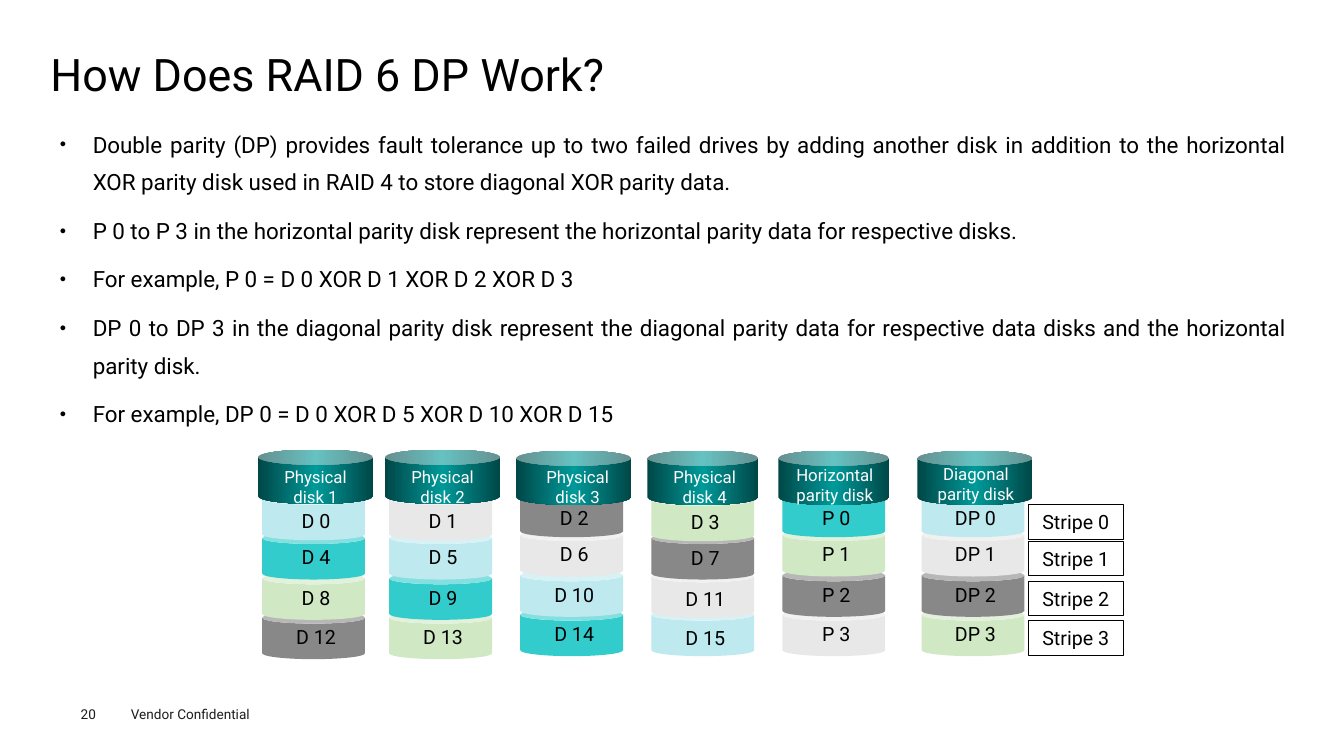
from dataclasses import dataclass
from copy import deepcopy

from lxml import etree
from pptx import Presentation
from pptx import util as u
from pptx.dml.color import RGBColor
from pptx.enum import shapes, text
from pptx.oxml.ns import qn

PX = u.Inches(1) // 100


@dataclass(frozen=True)
class Theme:
    font: str = "Roboto"
    black: str = "000000"
    white: str = "FFFFFF"
    footer: str = "1D1D1B"
    cap_edge: str = "004747"
    cap_middle: str = "009999"
    title_size: float = 32
    body_size: float = 16
    block_size: float = 14
    cap_size: float = 12
    footer_size: float = 9.7


@dataclass(frozen=True)
class Disk:
    name: str
    left: int
    top: int
    stack_span: int
    cap_top: int
    cap_width: int
    name_box: tuple
    blocks: str
    colors: str


THEME = Theme()
BLOCK_COLORS = {"blue": "BEE9EE", "teal": "33CCCC", "green": "D0E8C4",
                "dark": "888888", "light": "E8E8E8"}
LABEL_OFFSETS = (11, 47, 87, 126)

DISKS = (
    Disk("Physical disk 1", 260, 489, 118, 446, 114, (268, 458, 90, 50),
         "D 0,D 4,D 8,D 12", "blue teal green dark"),
    Disk("Physical disk 2", 386, 489, 118, 446, 114, (394, 458, 90, 50),
         "D 1,D 5,D 9,D 13", "light blue teal green"),
    Disk("Physical disk 3", 516, 486, 118, 447, 114, (528, 458, 90, 50),
         "D 2,D 6,D 10,D 14", "dark light blue teal"),
    Disk("Physical disk 4", 646, 490, 114, 447, 110, (654, 458, 90, 50),
         "D 3,D 7,D 11,D 15", "green dark light blue"),
    Disk("Horizontal parity disk", 776, 486, 118, 447, 110, (767, 456, 122, 50),
         "P 0,P 1,P 2,P 3", "teal green dark light"),
    Disk("Diagonal parity disk", 914, 486, 118, 447, 114, (905, 455, 126, 50),
         "DP 0,DP 1,DP 2,DP 3", "blue light dark green"),
)

POINTS = (
    "Double parity (DP) provides fault tolerance up to two failed drives by adding another "
    "disk in addition to the horizontal XOR parity disk used in RAID 4 to store diagonal "
    "XOR parity data.",
    "P 0 to P 3 in the horizontal parity disk represent the horizontal parity data for "
    "respective disks.",
    "For example, P 0 = D 0 XOR D 1 XOR D 2 XOR D 3",
    "DP 0 to DP 3 in the diagonal parity disk represent the diagonal parity data for "
    "respective data disks and the horizontal parity disk.",
    "For example, DP 0 = D 0 XOR D 5 XOR D 10 XOR D 15",
)


def emu(box):
    return [length * PX for length in box]


def apply(target, values):
    for name, value in values.items():
        setattr(target, name, value)


def move(shape, box):
    apply(shape, dict(zip(("left", "top", "width", "height"), emu(box))))


def write(paragraph, words, size, color, **layout):
    apply(paragraph, layout)
    run = paragraph.add_run()
    run.text = words
    apply(run.font, {"name": THEME.font, "size": u.Pt(size)})
    run.font.color.rgb = RGBColor.from_string(color)


def set_margins(frame, horizontal, vertical):
    apply(frame, {"margin_left": horizontal * PX, "margin_right": horizontal * PX,
                  "margin_top": vertical * PX, "margin_bottom": vertical * PX})


def add_label(slide, box, words, size, color, align=text.PP_ALIGN.CENTER, margins=(10, 5)):
    frame = slide.shapes.add_textbox(*emu(box)).text_frame
    frame.word_wrap = True
    set_margins(frame, *margins)
    write(frame.paragraphs[0], words, size, color, alignment=align)


def add_can(slide, box, adjustment):
    can = slide.shapes.add_shape(shapes.MSO_SHAPE.CAN, *emu(box))
    can.adjustments[0] = adjustment
    can.shadow.inherit = False
    can.line.fill.background()
    return can


def fill_cap(cap):
    cap.fill.gradient()
    cap.fill.gradient_angle = 0
    stop_list = next(cap._element.spPr.iter(qn("a:gsLst")))
    stop_list.append(deepcopy(stop_list[0]))
    colors = (THEME.cap_edge, THEME.cap_middle, THEME.cap_edge)
    for stop, position, color in zip(cap.fill.gradient_stops, (0, 0.5, 1), colors):
        stop.position = position
        stop.color.rgb = RGBColor.from_string(color)


def add_title(slide, box):
    title = slide.shapes.title
    move(title, box)
    frame = title.text_frame
    set_margins(frame, 0, 0)
    apply(frame, {"vertical_anchor": text.MSO_ANCHOR.MIDDLE,
                  "auto_size": text.MSO_AUTO_SIZE.NONE})
    write(frame.paragraphs[0], "How Does RAID 6 DP Work?", THEME.title_size, THEME.black,
          alignment=text.PP_ALIGN.LEFT, line_spacing=0.9)


def add_points(slide, box):
    body = slide.placeholders[1]
    move(body, box)
    frame = body.text_frame
    set_margins(frame, 9, 4)
    frame.auto_size = text.MSO_AUTO_SIZE.NONE
    for index, point in enumerate(POINTS):
        paragraph = frame.add_paragraph() if index else frame.paragraphs[0]
        properties = paragraph._p.get_or_add_pPr()
        properties.set("marL", str(33 * PX))
        properties.set("indent", str(-33 * PX))
        etree.SubElement(properties, qn("a:buSzPct")).set("val", "50000")
        etree.SubElement(properties, qn("a:buChar")).set("char", "●")
        write(paragraph, point, THEME.body_size, THEME.black,
              alignment=text.PP_ALIGN.JUSTIFY, line_spacing=1.4,
              space_before=u.Pt(7.9 if index else 0))


def add_disk(slide, disk):
    """Stack the blocks from the bottom up, then cover them with the named cap."""
    colors = disk.colors.split()
    for row in reversed(range(len(colors))):
        top = disk.top + round(row * disk.stack_span / 3)
        block = add_can(slide, (disk.left, top, 102, 47), 0.25)
        block.fill.solid()
        block.fill.fore_color.rgb = RGBColor.from_string(BLOCK_COLORS[colors[row]])
    for words, offset in zip(disk.blocks.split(","), LABEL_OFFSETS):
        add_label(slide, (disk.left + 16, disk.top + offset, 75, 34), words,
                  THEME.block_size, THEME.black)
    fill_cap(add_can(slide, (disk.left - 4, disk.cap_top, disk.cap_width, 54), 0.279))
    add_label(slide, disk.name_box, disk.name, THEME.cap_size, THEME.white)


def add_stripes(slide, left, top):
    for row, offset in enumerate(LABEL_OFFSETS):
        stripe = slide.shapes.add_shape(shapes.MSO_SHAPE.RECTANGLE,
                                        *emu((left, top + offset, 94, 34)))
        stripe.shadow.inherit = False
        stripe.fill.background()
        stripe.line.color.rgb = RGBColor.from_string(THEME.black)
        stripe.line.width = u.Pt(0.75)
        write(stripe.text_frame.paragraphs[0], f"Stripe {row}", THEME.block_size,
              THEME.black, alignment=text.PP_ALIGN.CENTER)


def add_footer(slide, left, top):
    style = (THEME.footer_size, THEME.footer, text.PP_ALIGN.LEFT)
    add_label(slide, (left, top + 5, 55, 16), "20", *style, margins=(0, 0))
    add_label(slide, (left + 40, top, 160, 27), "Vendor Confidential", *style)


def main():
    presentation = Presentation()
    apply(presentation, {"slide_width": 1333 * PX, "slide_height": 750 * PX})
    slide = presentation.slides.add_slide(presentation.slide_layouts[1])
    add_footer(slide, 80, 695)
    add_title(slide, (50, 49, 1235, 54))
    add_points(slide, (50, 115, 1235, 533))
    for disk in DISKS:
        add_disk(slide, disk)
    add_stripes(slide, 1020, 490)
    presentation.save("out.pptx")


if __name__ == "__main__":
    main()
